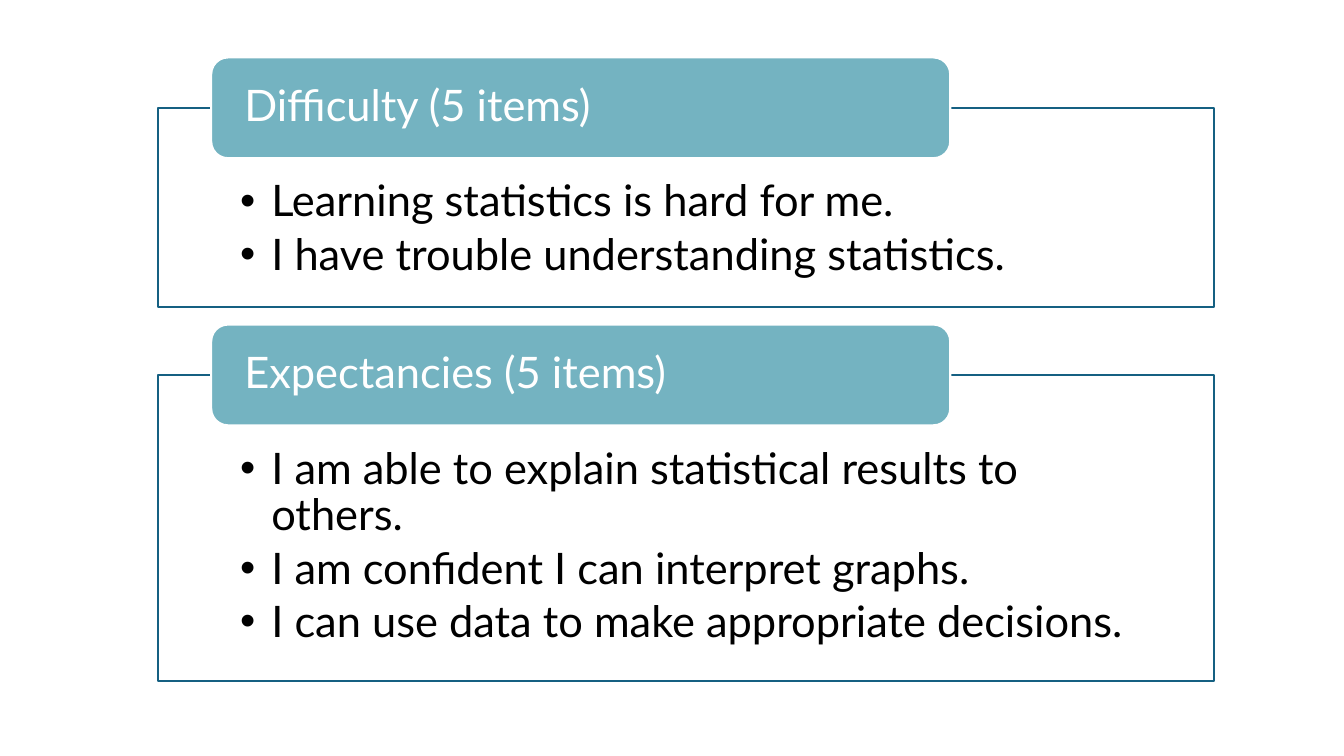
from lxml import etree
from pptx import Presentation
from pptx import util as u
from pptx.dml.color import RGBColor
from pptx.enum import shapes, text
from pptx.oxml import ns

COLORS = {"frame": "FFFFFF", "border": "156082", "label": "74B3C1",
          "label_text": "FFFFFF", "body_text": "000000"}
COLUMN, ROW = u.Inches(0.5236), u.Inches(0.5)

# Label, list items, frame height in rows
SECTIONS = [
    ("Difficulty (5 items)",
     ["Learning statistics is hard for me.",
      "I have trouble understanding statistics."], 3.96),
    ("Expectancies (5 items)",
     ["I am able to explain statistical results to others.",
      "I am confident I can interpret graphs.",
      "I can use data to make appropriate decisions."], 6.08),
]
FIRST_TOP, GAP = 1.14, 0.34


def color(name):
    return RGBColor.from_string(COLORS[name])


def apply(target, values):
    for name, value in values.items():
        setattr(target, name, value)


class SlideBuilder:
    frame_format = {"margin_left": u.Inches(0.81), "margin_right": u.Inches(0.81),
                    "margin_top": u.Inches(0.71), "margin_bottom": u.Inches(0.24),
                    "vertical_anchor": text.MSO_ANCHOR.TOP}
    label_format = {"margin_left": u.Inches(0.28), "margin_right": u.Inches(0.28),
                    "margin_top": 0, "margin_bottom": 0,
                    "vertical_anchor": text.MSO_ANCHOR.MIDDLE}
    para_format = {"line_spacing": 0.9, "space_before": u.Pt(0),
                   "alignment": text.PP_ALIGN.LEFT}
    font_format = {"name": "Lato", "size": u.Pt(31), "bold": False}

    def __init__(self, slide):
        self.slide = slide

    def place(self, box, left, top, width, height):
        apply(box, {"left": int(left * COLUMN), "top": int(top * ROW),
                    "width": int(width * COLUMN), "height": int(height * ROW)})

    def paint(self, box, fill, line):
        box.fill.solid()
        box.fill.fore_color.rgb = color(fill)
        box.line.color.rgb = color(line)
        box.line.width = u.Pt(1.5)

    def set_lines(self, box, lines, frame_format, text_color):
        frame = box.text_frame
        apply(frame, {"word_wrap": True, "auto_size": text.MSO_AUTO_SIZE.NONE,
                      **frame_format})
        frame.text = "\n".join(lines)
        for para in frame.paragraphs:
            apply(para, self.para_format)
            for span in para.runs:
                apply(span.font, self.font_format)
                span.font.color.rgb = color(text_color)
        return frame.paragraphs

    def list_frame(self, box, items, left, top, width, height):
        self.place(box, left, top, width, height)
        self.paint(box, "frame", "border")
        # Slightly transparent fill
        tint = box._element.spPr.find(ns.qn("a:solidFill"))[0]
        etree.SubElement(tint, ns.qn("a:alpha"), val="90000")
        # Bullets with a hanging indent
        for para in self.set_lines(box, items, self.frame_format, "body_text"):
            apply(para, {"level": 1, "space_after": u.Pt(4.5)})
            props = para._p.get_or_add_pPr()
            props.set("marL", str(u.Inches(0.31)))
            props.set("indent", str(-u.Inches(0.31)))
            etree.SubElement(props, ns.qn("a:buFont"), typeface="Arial")
            etree.SubElement(props, ns.qn("a:buChar"), char="•")

    def label(self, wording, left, top, width, height):
        box = self.slide.shapes.add_shape(
            shapes.MSO_SHAPE.ROUNDED_RECTANGLE, 0, 0, 0, 0)
        box.shadow.inherit = False
        self.place(box, left, top, width, height)
        self.paint(box, "label", "label_text")
        self.set_lines(box, [wording], self.label_format, "label_text")


def main():
    deck = Presentation()
    deck.slide_width, deck.slide_height = u.Inches(13.33), u.Inches(7.5)
    page = deck.slides.add_slide(deck.slide_layouts[3])
    title, *bodies = page.placeholders
    title._element.getparent().remove(title._element)

    # Stack the sections, each label straddling its frame's top edge
    builder = SlideBuilder(page)
    top = FIRST_TOP
    for body, (wording, items, height) in zip(bodies, SECTIONS):
        builder.list_frame(body, items, 3, top + 1, 20, height)
        builder.label(wording, 4, top, 14, 2)
        top += 1 + height + GAP
    deck.save("out.pptx")


if __name__ == "__main__":
    main()
